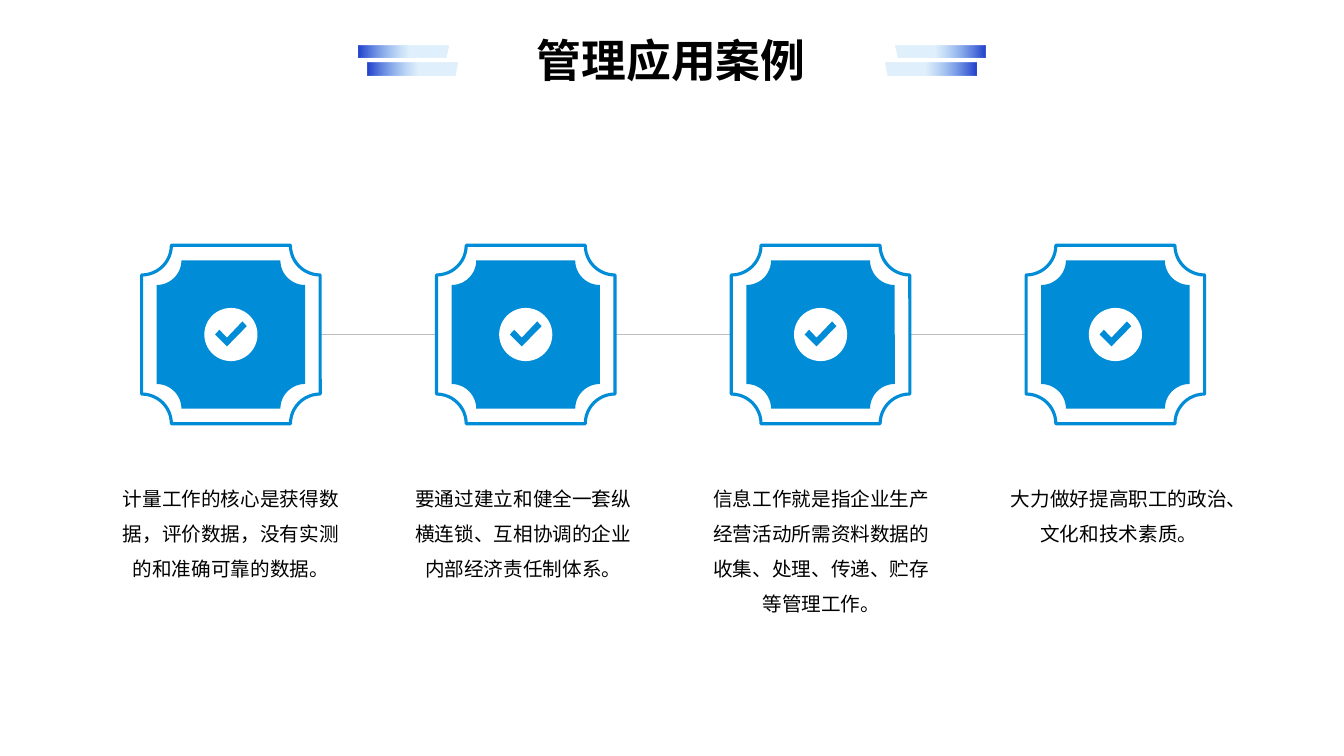
"""Builds the management application cases slide."""
from lxml import etree
from pptx import Presentation
from pptx import util as u
from pptx.dml.color import RGBColor
from pptx.enum import shapes, text
from pptx.oxml.ns import qn

BLUE = RGBColor(0x00, 0x8C, 0xD7)
NAVY = RGBColor(0x21, 0x40, 0xCC)
SKY = RGBColor(0x63, 0xB0, 0xF1)
GREY = RGBColor(0xBF, 0xBF, 0xBF)
WHITE = RGBColor(0xFF, 0xFF, 0xFF)
BLACK = RGBColor(0x00, 0x00, 0x00)

PAGE_WIDTH, PAGE_HEIGHT = 33.87, 19.05
FIRST_CASE, CASE_STEP, CASE_MIDDLE = 5.82, 7.43, 8.43
TICK = [(-0.1, 0.3), (-0.4, 0), (-0.29, -0.12), (-0.1, 0.08), (0.29, -0.33), (0.4, -0.21)]
CASES = [
    (2.82, 3, "计量工作的核心是获得数据，评价数据，没有实测的和准确可靠的数据。"),
    (10.19, 3, "要通过建立和健全一套纵横连锁、互相协调的企业内部经济责任制体系。"),
    (17.7, 4, "信息工作就是指企业生产经营活动所需资料数据的收集、处理、传递、贮存等管理工作。"),
    (25.2, 2, "大力做好提高职工的政治、文化和技术素质。"),
]


def write(frame, words, size=14, bold=False, color=BLACK, spacing=1.0, font="Arial"):
    paragraph = frame.paragraphs[0]
    paragraph.alignment = text.PP_ALIGN.CENTER
    paragraph.line_spacing = spacing
    run = paragraph.add_run()
    run.text = words
    run.font.name, run.font.size, run.font.bold = font, u.Pt(size), bold
    run.font.color.rgb = color


class Board:
    def __init__(self, slide):
        self.slide = slide
        self.outline_width = u.Pt(2.25)

    def finish(self, shape, fill, outline=None):
        shape.shadow.inherit = False
        shape.fill.solid()
        shape.fill.fore_color.rgb = fill
        if outline is None:
            shape.line.fill.background()
        else:
            shape.line.color.rgb = outline
            shape.line.width = self.outline_width

    def centred(self, kind, x, y, size, fill, outline=None):
        shape = self.slide.shapes.add_shape(
            kind, u.Cm(x - size / 2), u.Cm(y - size / 2), u.Cm(size), u.Cm(size))
        self.finish(shape, fill, outline)

    def polygon(self, points, fill):
        corners = [(u.Cm(x), u.Cm(y)) for x, y in points]
        builder = self.slide.shapes.build_freeform(*corners[0])
        builder.add_line_segments(corners[1:], close=True)
        shape = builder.convert_to_shape()
        self.finish(shape, fill)
        return shape

    def bar(self, x, y, direction):
        length, height, slant = 2.27 * direction, 0.32, 0.07 * direction
        bar = self.polygon([(x, y), (x + length, y), (x + length - slant, y + height),
                            (x, y + height)], NAVY)
        bar.fill.gradient()
        bar.fill.gradient_angle = 0 if direction > 0 else 180
        for stop, position, color in zip(bar.fill.gradient_stops, (0, 0.56), (NAVY, SKY)):
            stop.position, stop.color.rgb = position, color
        faded = bar._element.findall(".//" + qn("a:srgbClr"))[1]
        etree.SubElement(faded, qn("a:alpha")).set("val", "20000")

    def line(self, start, end, y):
        line = self.slide.shapes.add_connector(
            shapes.MSO_CONNECTOR.STRAIGHT, u.Cm(start), u.Cm(y), u.Cm(end), u.Cm(y))
        line.line.color.rgb, line.line.width = GREY, u.Pt(1)
        etree.SubElement(line._element.spPr, qn("a:effectLst"))

    def label(self, x, y, width, height, words, **style):
        frame = self.slide.shapes.add_textbox(
            u.Cm(x), u.Cm(y), u.Cm(width), u.Cm(height)).text_frame
        frame.word_wrap = True
        frame.auto_size = text.MSO_AUTO_SIZE.SHAPE_TO_FIT_TEXT
        write(frame, words, **style)

    def case(self, x, y):
        plaque = shapes.MSO_SHAPE.PLAQUE
        self.centred(plaque, x, y, 4.5, WHITE, BLUE)
        self.centred(plaque, x, y, 3.74, BLUE)
        self.centred(shapes.MSO_SHAPE.OVAL, x, y, 1.34, WHITE)
        self.polygon([(x + dx, y + dy) for dx, dy in TICK], BLUE)


def main():
    deck = Presentation()
    deck.slide_width, deck.slide_height = u.Cm(PAGE_WIDTH), u.Cm(PAGE_HEIGHT)
    board = Board(deck.slides.add_slide(deck.slide_layouts[6]))

    board.line(29.92, 6.5, CASE_MIDDLE)
    for index, (left, rows, words) in enumerate(CASES):
        board.case(FIRST_CASE + index * CASE_STEP, CASE_MIDDLE)
        board.label(left, 11.84, 6, 0.25 + 0.89 * rows, words, spacing=1.5)

    for inset, top in ((9.04, 1.14), (9.27, 1.57)):
        board.bar(inset, top, 1)
        board.bar(PAGE_WIDTH - inset, top, -1)
    board.label(11.71, 0.71, 10.41, 1.6, "管理应用案例", size=32, bold=True)
    deck.save("out.pptx")


if __name__ == "__main__":
    main()
